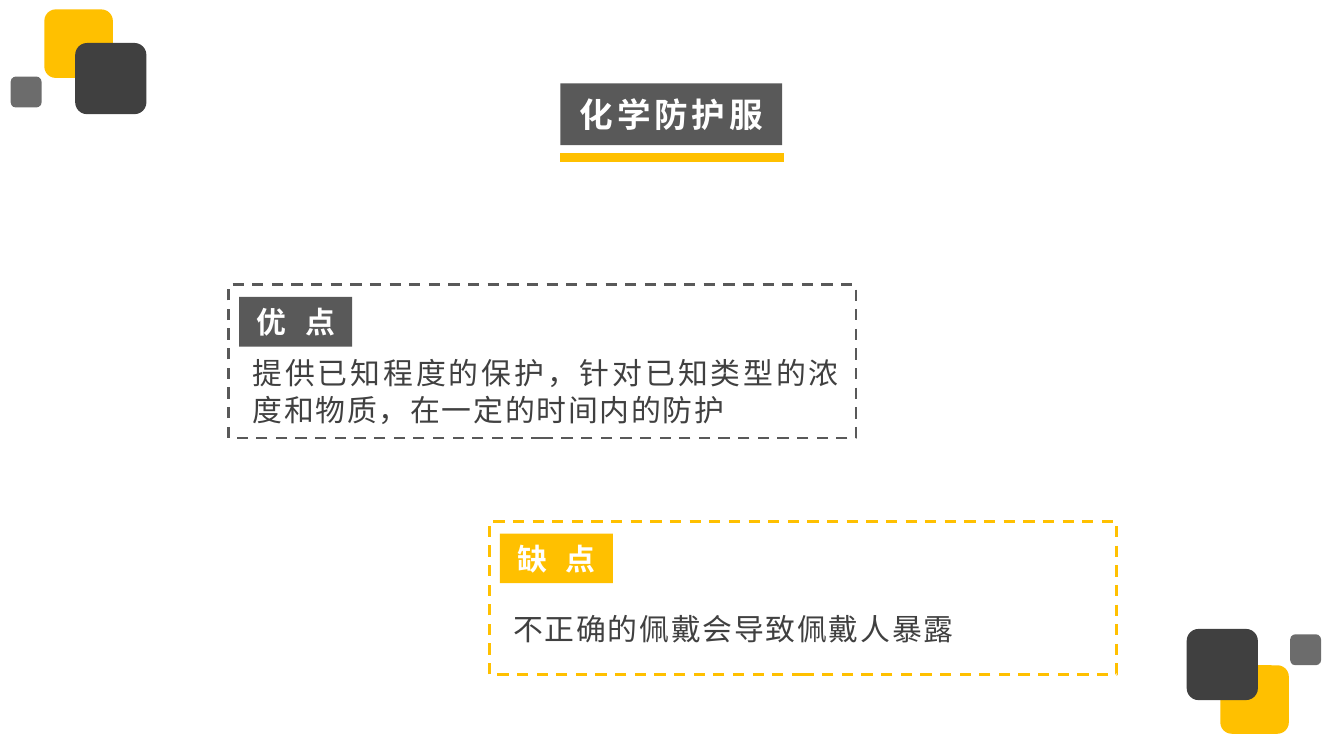
from lxml import etree
from pptx import Presentation
from pptx import util as u
from pptx.dml.color import RGBColor
from pptx.enum import dml, shapes, text
from pptx.oxml import ns

THEME = {
    "font": "Noto Sans CJK SC",
    "yellow": RGBColor.from_string("FFC000"),
    "dark": RGBColor.from_string("404040"),
    "grey": RGBColor.from_string("595959"),
    "white": RGBColor.from_string("FFFFFF"),
    "title": u.Pt(18),
    "body": u.Pt(16),
    "leading": u.Pt(19.4),
}


def add_block(s, kind, box, color):
    sp = s.shapes.add_shape(kind, *map(u.Inches, box))
    sp.shadow.inherit = False
    sp.fill.solid()
    sp.fill.fore_color.rgb = color
    sp.line.fill.background()
    return sp


def write(sp, words, size, color, bold, align, spacing, frame):
    """Fill a shape with one formatted run; spacing is in hundredths of a point."""
    tf = sp.text_frame
    for name, value in frame.items():
        setattr(tf, name, value)
    p = tf.paragraphs[0]
    p.alignment = align
    r = p.add_run()
    r.text = words
    for name, value in {"name": THEME["font"], "size": size, "bold": bold}.items():
        setattr(r.font, name, value)
    r.font.color.rgb = color
    rPr = r.font._element
    rPr.set("spc", str(spacing))
    etree.SubElement(rPr, ns.qn("a:ea"), typeface=THEME["font"])
    return p


prs = Presentation()
prs.slide_width = u.Inches(10)
prs.slide_height = prs.slide_width * 9 // 16
s = prs.slides.add_slide(prs.slide_layouts[5])

# Corner decorations: left, top, side, colour, opacity in percent
for x, y, side, color, opacity in [
    (0.33, 0.07, 0.51, "yellow", 100),
    (0.56, 0.32, 0.53, "dark", 100),
    (0.08, 0.57, 0.23, "dark", 77),
    (9.08, 4.95, 0.51, "yellow", 100),
    (8.83, 4.68, 0.53, "dark", 100),
    (9.6, 4.72, 0.23, "dark", 77),
]:
    sp = add_block(s, shapes.MSO_SHAPE.ROUNDED_RECTANGLE, (x, y, side, side), THEME[color])
    if opacity < 100:
        clr = sp.fill._xPr.find(".//" + ns.qn("a:srgbClr"))
        etree.SubElement(clr, ns.qn("a:alpha"), val=str(opacity * 1000))

# Title with underline
title = s.shapes.title
for name, value in {"left": 4.17, "top": 0.62, "width": 1.65, "height": 0.46}.items():
    setattr(title, name, u.Inches(value))
title.fill.solid()
title.fill.fore_color.rgb = THEME["grey"]
write(title, "化学防护服", THEME["title"], THEME["white"], True, text.PP_ALIGN.CENTER, 200, {
    "vertical_anchor": text.MSO_ANCHOR.MIDDLE,
    "auto_size": text.MSO_AUTO_SIZE.NONE,
    "word_wrap": True,
    "margin_left": u.Inches(0.12), "margin_right": u.Inches(0.12),
    "margin_top": u.Inches(0.08), "margin_bottom": u.Inches(0.08),
})
rule = s.shapes.add_connector(shapes.MSO_CONNECTOR.STRAIGHT,
                              *map(u.Inches, (4.17, 1.17, 5.83, 1.17)))
rule.line.color.rgb = THEME["yellow"]
rule.line.width = u.Pt(5)
etree.SubElement(rule._element.spPr, ns.qn("a:effectLst"))

# Cards: left, top, colour, label, description, its offset, width and height
for x, y, color, label, words, drop, width, height in [
    (1.7, 2.12, "grey", "优  点",
     "提供已知程度的保护，针对已知类型的浓度和物质，在一定的时间内的防护", 0.47, 4.58, 0.64),
    (3.64, 3.88, "yellow", "缺  点", "不正确的佩戴会导致佩戴人暴露", 0.61, 3.8, 0.37),
]:
    tag = add_block(s, shapes.MSO_SHAPE.RECTANGLE, (x + 0.08, y + 0.09, 0.84, 0.37), THEME[color])
    write(tag, label, THEME["body"], THEME["white"], True, text.PP_ALIGN.CENTER, 100,
          {"vertical_anchor": text.MSO_ANCHOR.MIDDLE, "word_wrap": False})

    note = s.shapes.add_textbox(*map(u.Inches, (x + 0.08, y + drop, width, height)))
    p = write(note, words, THEME["body"], THEME["dark"], False, text.PP_ALIGN.JUSTIFY, 100,
              {"word_wrap": True})
    p.line_spacing = THEME["leading"]

    frame = add_block(s, shapes.MSO_SHAPE.RECTANGLE, (x, y, 4.67, 1.14), THEME[color])
    frame.fill.background()
    frame.line.color.rgb = THEME[color]
    frame.line.width = u.Pt(1.5)
    frame.line.dash_style = dml.MSO_LINE.DASH

prs.save("out.pptx")
